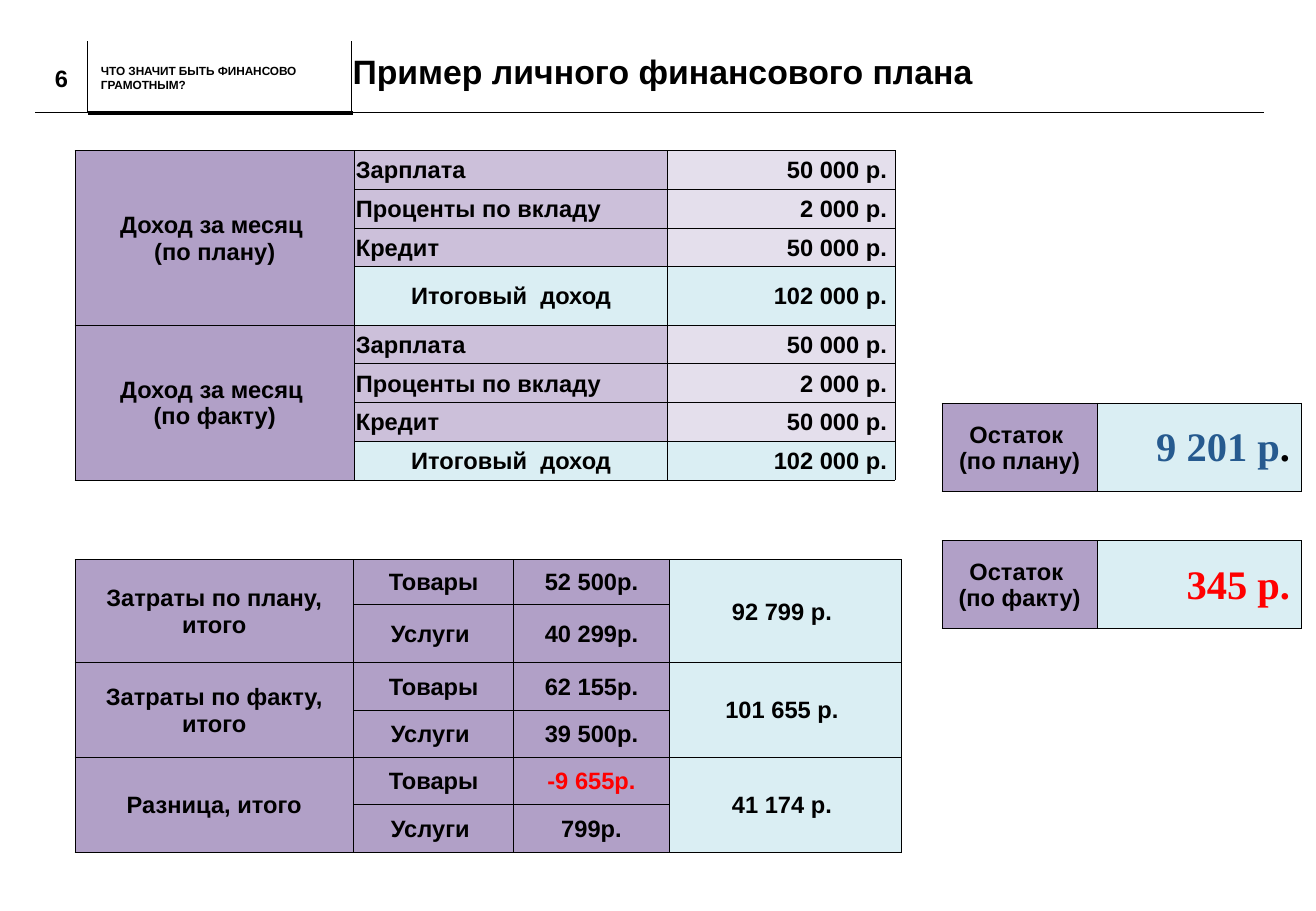
from dataclasses import dataclass
from typing import Optional

from lxml import etree
from pptx import Presentation
from pptx.dml.color import RGBColor
from pptx.enum import shapes, text
from pptx.oxml import ns
from pptx.util import Cm, Pt

BLACK = RGBColor(0x00, 0x00, 0x00)
RED = RGBColor(0xFF, 0x00, 0x00)
BLUE = RGBColor(0x26, 0x5A, 0x8F)
PURPLE = RGBColor(0xB1, 0xA0, 0xC7)
LILAC = RGBColor(0xCC, 0xC0, 0xDA)
PALE = RGBColor(0xE4, 0xDF, 0xEC)
AQUA = RGBColor(0xDA, 0xEE, 0xF3)
LEFT, CENTER, RIGHT = text.PP_ALIGN.LEFT, text.PP_ALIGN.CENTER, text.PP_ALIGN.RIGHT
MIDDLE = text.MSO_ANCHOR.MIDDLE


@dataclass
class Run:
    words: str
    color: RGBColor = BLACK
    size: float = 14
    face: str = "Arial"


@dataclass
class Cell:
    lines: list[list[Run]]
    fill: Optional[RGBColor] = PURPLE
    align: text.PP_ALIGN = CENTER
    span: int = 1
    sides: str = "LRTB"


@dataclass
class Line:
    x1: float
    y1: float
    x2: float
    y2: float
    width: float = 0.25


@dataclass
class Label:
    x: float
    y: float
    w: float
    h: float
    run: Run
    align: text.PP_ALIGN = LEFT
    spacing: float = 1.0


@dataclass
class Grid:
    x: float
    y: float
    cols: list[float]
    heights: list[float]
    rows: list[list[Optional[Cell]]]


def plain(words: str, fill: RGBColor = PURPLE, align: text.PP_ALIGN = CENTER,
          span: int = 1, color: RGBColor = BLACK) -> Cell:
    return Cell([[Run(line, color)] for line in words.split("\n")], fill, align, span)


def income_rows(heading: str) -> list[list[Optional[Cell]]]:
    items = [("Зарплата", "50 000 р. "), ("Проценты по вкладу", "2 000 р. "),
             ("Кредит", "50 000 р. ")]
    rows = [[None, plain(name, LILAC, LEFT), plain(amount, PALE, RIGHT)]
            for name, amount in items]
    rows.append([None, plain("Итоговый  доход", AQUA), plain("102 000 р. ", AQUA, RIGHT)])
    rows[0][0] = plain(heading, span=4)
    return rows


def cost_rows(heading: str, goods: str, services: str, total: str,
              goods_color: RGBColor = BLACK) -> list[list[Optional[Cell]]]:
    return [[plain(heading, span=2), plain("Товары"), plain(goods, color=goods_color),
             plain(total, AQUA, span=2)],
            [None, plain("Услуги "), plain(services), None]]


def balance_row(heading: str, runs: list[Run]) -> list[Optional[Cell]]:
    return [plain(heading), Cell([runs], AQUA, RIGHT)]


def amount(words: str, color: RGBColor) -> Run:
    return Run(words, color, 24, "Times New Roman")


def write(tf, lines: list[list[Run]], align: text.PP_ALIGN, spacing: float = 1.0) -> None:
    for i, line in enumerate(lines):
        p = tf.add_paragraph() if i else tf.paragraphs[0]
        p.alignment = align
        p.line_spacing = spacing
        for run in line:
            r = p.add_run()
            r.text = run.words
            for name, value in {"size": Pt(run.size), "name": run.face, "bold": True}.items():
                setattr(r.font, name, value)
            r.font.color.rgb = run.color


def draw_line(s, line: Line) -> None:
    c = s.shapes.add_connector(shapes.MSO_CONNECTOR.STRAIGHT,
                               Cm(line.x1), Cm(line.y1), Cm(line.x2), Cm(line.y2))
    c.line.color.rgb = BLACK
    c.line.width = Pt(line.width)
    etree.SubElement(c._element.spPr, ns.qn("a:effectLst"))


def draw_label(s, label: Label) -> None:
    sp = s.shapes.add_textbox(Cm(label.x), Cm(label.y), Cm(label.w), Cm(label.h))
    tf = sp.text_frame
    for name, value in {"word_wrap": True, "vertical_anchor": MIDDLE, "margin_left": 0,
                        "margin_right": 0, "margin_top": 0, "margin_bottom": 0}.items():
        setattr(tf, name, value)
    write(tf, [[label.run]], label.align, label.spacing)


def set_borders(cell, sides: str) -> None:
    tc_pr = cell._tc.get_or_add_tcPr()
    for side in "LRTB":
        ln = etree.SubElement(tc_pr, ns.qn(f"a:ln{side}"), w=str(Pt(0.5)))
        if side in sides:
            fill = etree.SubElement(ln, ns.qn("a:solidFill"))
            etree.SubElement(fill, ns.qn("a:srgbClr"), val=str(BLACK))
        else:
            etree.SubElement(ln, ns.qn("a:noFill"))


def draw_grid(s, grid: Grid) -> None:
    frame = s.shapes.add_table(len(grid.heights), len(grid.cols), Cm(grid.x), Cm(grid.y),
                               Cm(sum(grid.cols)), Cm(sum(grid.heights)))
    table = frame.table
    table.first_row = table.horz_banding = False
    for column, width in zip(table.columns, grid.cols):
        column.width = Cm(width)
    for row, height in zip(table.rows, grid.heights):
        row.height = Cm(height)
    for i, row in enumerate(grid.rows):
        for j, item in enumerate(row):
            cell = table.cell(i, j)
            for name, value in {"margin_left": Cm(0.03), "margin_right": Cm(0.03),
                                "margin_top": Cm(0.03), "margin_bottom": 0,
                                "vertical_anchor": MIDDLE}.items():
                setattr(cell, name, value)
            set_borders(cell, item.sides if item else "LRTB")
            if item and item.fill is not None:
                cell.fill.solid()
                cell.fill.fore_color.rgb = item.fill
            else:
                cell.fill.background()
            if item:
                write(cell.text_frame, item.lines, item.align)
                if item.span > 1:
                    cell.merge(table.cell(i + item.span - 1, j))


LINES = [
    Line(1.83, 2.34, 0.74, 2.34),
    Line(7.37, 2.36, 1.83, 2.36, 2.25),
    Line(26.42, 2.34, 7.32, 2.34),
    Line(1.83, 2.36, 1.83, 0.86),
    Line(7.34, 2.36, 7.34, 0.86),
]
LABELS = [
    Label(2.11, 1.32, 5.16, 0.61, Run("ЧТО ЗНАЧИТ БЫТЬ ФИНАНСОВО ГРАМОТНЫМ?", size=7)),
    Label(7.37, 0.3, 19.8, 2.46, Run("Пример личного финансового плана", size=20), spacing=0.9),
    Label(0.74, 1.12, 1.09, 1.02, Run("6"), CENTER),
]
GAP = Cell([], None, sides="TB")
GRIDS = [
    Grid(1.57, 3.15, [5.84, 6.55, 4.75], [0.81] * 3 + [1.12] + [0.81] * 4,
         income_rows("Доход за месяц \n(по плану)") + income_rows("Доход за месяц \n(по факту)")),
    Grid(1.57, 11.7, [5.82, 3.35, 3.25, 4.85], [0.94, 1.12] + [0.99] * 4,
         cost_rows("Затраты по плану, итого", "52 500р.", "40 299р.", "92 799 р. ")
         + cost_rows("Затраты по факту, итого", "62 155р.", "39 500р.", "101 655 р. ")
         + cost_rows("Разница, итого", "-9 655р.", "799р.", "41 174 р. ", RED)),
    Grid(19.69, 8.43, [3.25, 4.27], [1.85, 1.02, 1.85],
         [balance_row("Остаток \n(по плану)", [amount("9 201 р", BLUE), amount(". ", BLACK)]),
          [GAP, GAP],
          balance_row("Остаток \n(по факту)", [amount("345 р. ", RED)])]),
]


def main() -> None:
    prs = Presentation()
    prs.slide_width, prs.slide_height = Cm(27.51), Cm(19.05)
    s = prs.slides.add_slide(prs.slide_layouts[6])
    for draw, items in ((draw_line, LINES), (draw_label, LABELS), (draw_grid, GRIDS)):
        for item in items:
            draw(s, item)
    prs.save("out.pptx")


if __name__ == "__main__":
    main()
